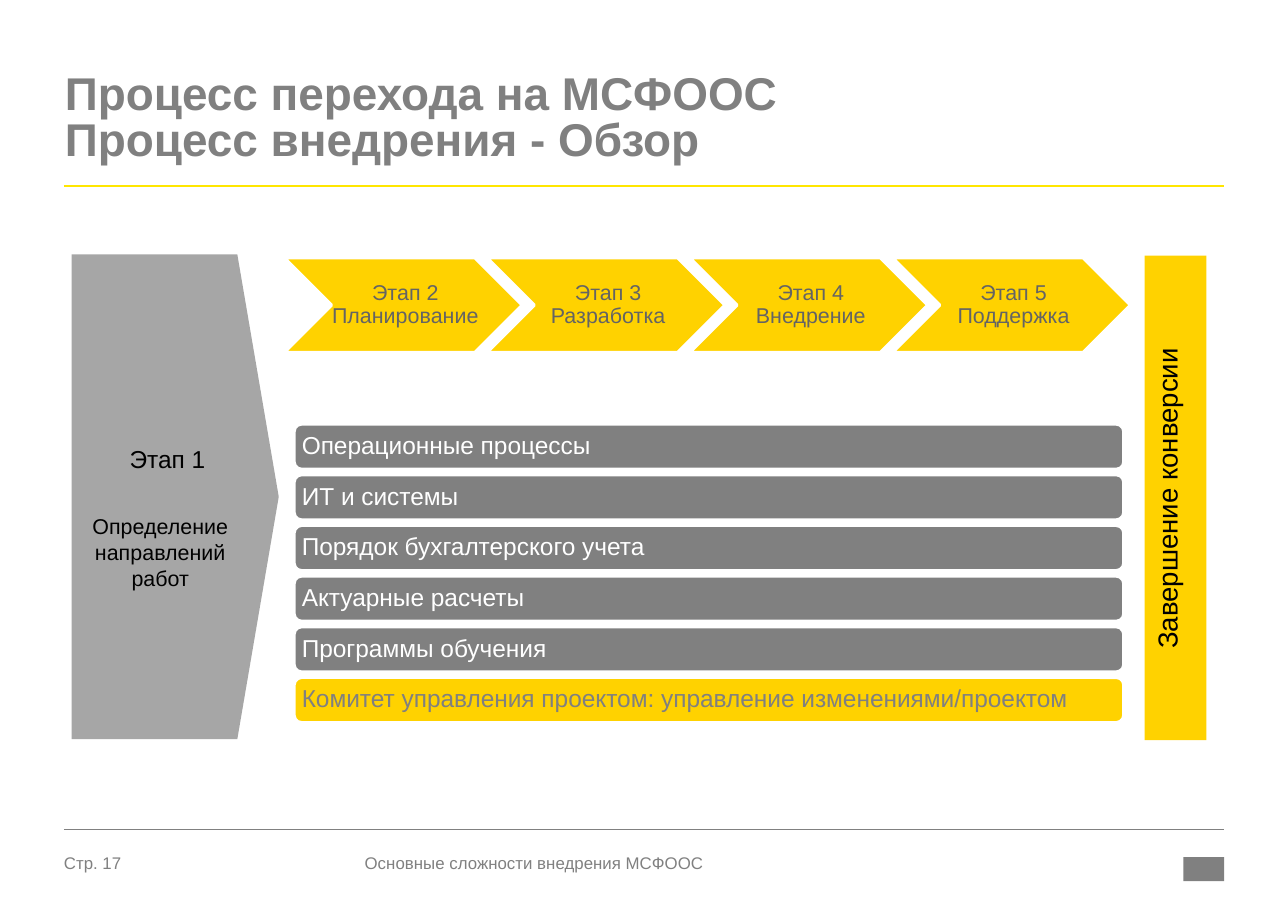
import pptx
import pptx.dml.color
import pptx.enum.shapes
import pptx.enum.text
import pptx.oxml
import pptx.oxml.ns
import pptx.util
from dataclasses import dataclass

Inches = pptx.util.Inches
Pt = pptx.util.Pt
Shape = pptx.enum.shapes.MSO_SHAPE
Align = pptx.enum.text.PP_ALIGN
Anchor = pptx.enum.text.MSO_ANCHOR


@dataclass(frozen=True)
class Theme:
    font: str = "Arial"
    yellow: str = "FFD200"
    rule: str = "FFE600"
    grey: str = "808080"
    light_grey: str = "A6A6A6"
    stage_text: str = "646464"
    black: str = "000000"
    white: str = "FFFFFF"
    title: int = 30
    closing: int = 18
    body: int = 16
    label: int = 14
    footer: int = 11


def rgb(value):
    return pptx.dml.color.RGBColor.from_string(value)


class SlideBuilder:
    def __init__(self, page, theme):
        self.page = page
        self.theme = theme

    def fill_text(self, box, text, size, color, bold=False, align=Align.LEFT,
                  spacing=1.0, insets=(0, 0, 0, 0), anchor=Anchor.TOP, wrap=True):
        """Fill a box with one paragraph; insets run left, top, right, bottom."""
        frame = box.text_frame
        sides = ("margin_left", "margin_top", "margin_right", "margin_bottom")
        frame_format = dict(zip(sides, map(Inches, insets)))
        frame_format |= {"word_wrap": wrap, "vertical_anchor": anchor}
        para = frame.paragraphs[0]
        para.text = text.replace("\n", "\v")
        para_format = {"alignment": align, "line_spacing": spacing}
        span_format = {"name": self.theme.font, "size": Pt(size), "bold": bold}
        targets = [(frame, frame_format), (para, para_format)]
        targets += [(span.font, span_format) for span in para.runs]
        for target, values in targets:
            for name, value in values.items():
                setattr(target, name, value)
        for span in para.runs:
            span.font.color.rgb = rgb(color)

    def text(self, place, *content, **style):
        box = self.page.shapes.add_textbox(*map(Inches, place))
        self.fill_text(box, *content, **style)

    def shape(self, kind, place, fill, outline=None):
        shape = self.page.shapes.add_shape(kind, *map(Inches, place))
        shape.shadow.inherit = False
        shape.fill.solid()
        shape.fill.fore_color.rgb = rgb(fill)
        if outline:
            shape.line.color.rgb = rgb(outline)
            shape.line.width = Pt(2)
        else:
            shape.line.fill.background()
        return shape

    def rule(self, left, right, top, color, width):
        line = self.page.shapes.add_connector(
            pptx.enum.shapes.MSO_CONNECTOR.STRAIGHT,
            *map(Inches, (left, top, right, top)))
        line.line.color.rgb = rgb(color)
        line.line.width = Pt(width)
        line.element.spPr.append(pptx.oxml.parse_xml(
            f"<a:effectLst {pptx.oxml.ns.nsdecls('a')}/>"))


def add_frame(builder):
    """Title, rules and footer."""
    theme = builder.theme
    builder.rule(0.58, 11.11, 1.69, theme.rule, 1.5)
    builder.rule(0.58, 11.11, 7.53, theme.grey, 0.25)
    builder.text((0.59, 0.66, 10.53, 1.04),
                 "Процесс перехода на МСФООС\nПроцесс внедрения - Обзор",
                 theme.title, theme.grey, bold=True, spacing=0.85)
    builder.text((0.58, 7.74, 0.92, 0.24), "Стр. 17", theme.footer, theme.grey)
    builder.text((3.31, 7.74, 4.39, 0.24), "Основные сложности внедрения МСФООС",
                 theme.footer, theme.grey)
    builder.shape(Shape.RECTANGLE, (10.74, 7.78, 0.37, 0.22), theme.grey)


def add_first_stage(builder):
    theme = builder.theme
    arrow = builder.shape(Shape.PENTAGON, (0.65, 2.31, 1.88, 4.4), theme.light_grey)
    arrow.adjustments[0] = 0.2
    style = {"align": Align.CENTER, "insets": (0.1, 0.05, 0.1, 0.05)}
    builder.text((0.74, 3.98, 1.56, 0.37), "Этап 1", theme.body, theme.black, **style)
    builder.text((0.65, 4.61, 1.61, 0.81), "Определение направлений работ",
                 theme.label, theme.black, **style)


def add_stages(builder):
    theme = builder.theme
    names = ("Планирование", "Разработка", "Внедрение", "Поддержка")
    for index, name in enumerate(names):
        place = (2.58 + 1.84 * index, 2.34, 2.16, 0.86)
        chevron = builder.shape(Shape.CHEVRON, place, theme.yellow, theme.white)
        builder.fill_text(chevron, f"Этап {index + 2}\n{name}", theme.label,
                          theme.stage_text, align=Align.CENTER, spacing=0.9,
                          insets=(0.06, 0.02, 0.02, 0.02), anchor=Anchor.MIDDLE,
                          wrap=False)


def add_workstreams(builder):
    theme = builder.theme
    names = ("Операционные процессы", "ИТ и системы", "Порядок бухгалтерского учета",
             "Актуарные расчеты", "Программы обучения",
             "Комитет управления проектом: управление изменениями/проектом")
    for index, name in enumerate(names):
        is_committee = name == names[-1]
        fill = theme.yellow if is_committee else theme.grey
        color = theme.grey if is_committee else theme.white
        bar = builder.shape(Shape.ROUNDED_RECTANGLE,
                            (2.67, 3.85 + 0.46 * index, 7.53, 0.41), fill, theme.white)
        builder.fill_text(bar, name, theme.body, color, spacing=0.9,
                          insets=(0.05, 0.05, 0.05, 0.05), anchor=Anchor.MIDDLE)


def add_closing(builder):
    theme = builder.theme
    bar = builder.shape(Shape.RECTANGLE, (10.39, 2.32, 0.56, 4.4), theme.yellow)
    builder.fill_text(bar, "Завершение конверсии", theme.closing, theme.black,
                      align=Align.CENTER, insets=(0.1, 0.11, 0.1, 0.05))
    bar.element.txBody.bodyPr.set("vert", "vert270")


def main():
    deck = pptx.Presentation()
    deck.slide_width = Inches(11.69)
    deck.slide_height = Inches(8.27)
    page = deck.slides.add_slide(deck.slide_layouts[6])
    builder = SlideBuilder(page, Theme())
    add_frame(builder)
    add_stages(builder)
    add_first_stage(builder)
    add_workstreams(builder)
    add_closing(builder)
    deck.save("out.pptx")


if __name__ == "__main__":
    main()
